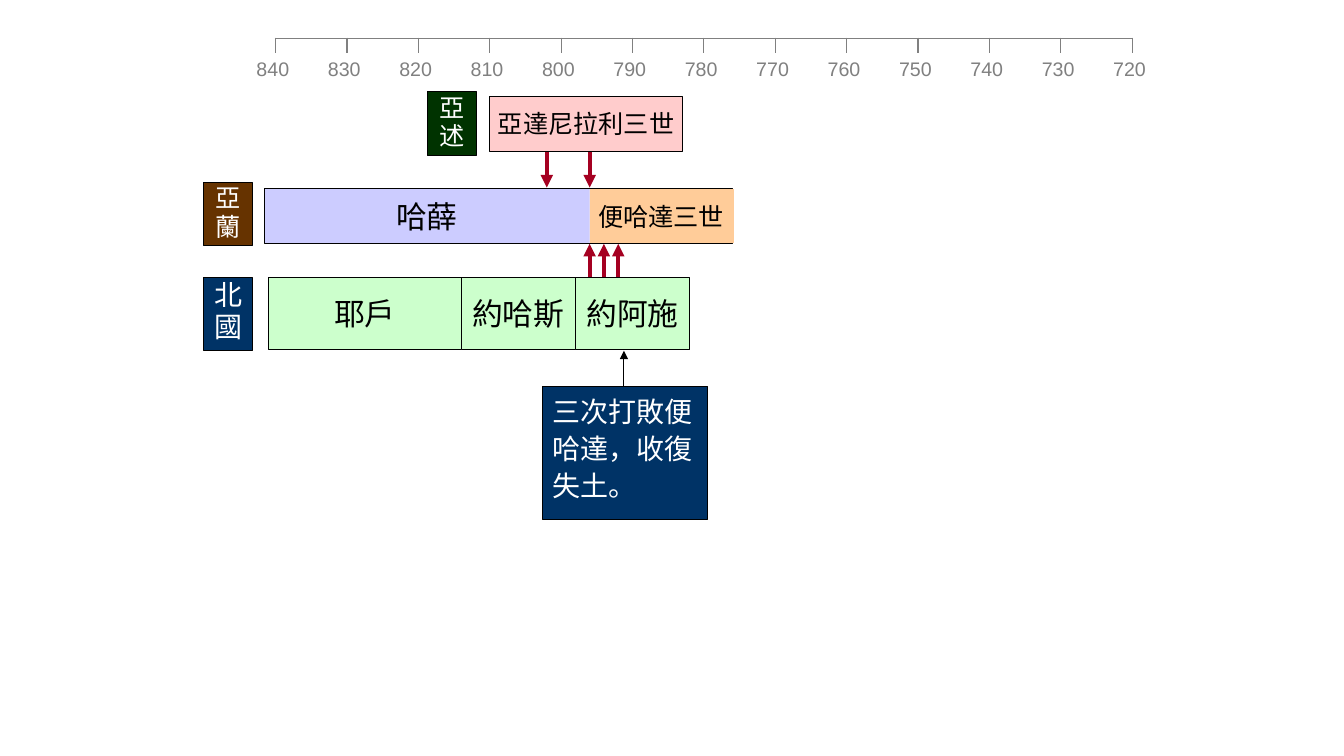
from dataclasses import dataclass

from pptx import Presentation
from pptx.dml.color import RGBColor
from pptx.enum.shapes import MSO_CONNECTOR as Connector, MSO_SHAPE as Shape
from pptx.enum.text import MSO_ANCHOR as Anchor, PP_ALIGN as Align
from pptx.oxml.ns import qn
from pptx.util import Pt
from lxml.etree import SubElement


@dataclass(frozen=True)
class Theme:
    black: str = "000000"
    white: str = "FFFFFF"
    grey: str = "808080"
    attack: str = "A50021"
    navy: str = "003366"
    brown: str = "663300"
    forest: str = "003300"
    pink: str = "FFCCCC"
    lilac: str = "CCCCFF"
    orange: str = "FFCC99"
    mint: str = "CCFFCC"
    latin: str = "Arial"
    cjk: str = "Noto Sans CJK SC"
    scale: int = 14
    small: int = 18
    medium: int = 20
    large: int = 22
    thin: float = 0.75


class Timeline:
    origin, first_year, per_year = 196.8, 840, 5.1

    def __init__(self, slide, theme):
        self.slide, self.theme = slide, theme

    def x(self, year):
        return self.origin + (self.first_year - year) * self.per_year

    def add_lines(self, frame, lines, size, color, font=None, **layout):
        font = font or self.theme.latin
        for index, line in enumerate(lines):
            paragraph = frame.paragraphs[0] if index == 0 else frame.add_paragraph()
            for key, value in layout.items():
                setattr(paragraph, key, value)
            run = paragraph.add_run()
            run.text = line
            for key, value in {"size": Pt(size), "name": font}.items():
                setattr(run.font, key, value)
            run.font.color.rgb = RGBColor.from_string(color)
            SubElement(run.font._element, qn("a:ea"), typeface=font)

    def box(self, left, top, width, height, fill=None, outline=True):
        box = self.slide.shapes.add_shape(
            Shape.RECTANGLE, Pt(left), Pt(top), Pt(width), Pt(height))
        box.shadow.inherit = False
        if fill:
            box.fill.solid()
            box.fill.fore_color.rgb = RGBColor.from_string(fill)
        else:
            box.fill.background()
        if outline:
            box.line.color.rgb = RGBColor.from_string(self.theme.black)
            box.line.width = Pt(self.theme.thin)
        else:
            box.line.fill.background()
        return box

    def reign(self, king, start, end, top, height, fill, size, font, outline=True):
        left = self.x(start)
        frame = self.box(left, top, self.x(end) - left, height, fill, outline).text_frame
        for key, value in {"word_wrap": False, "vertical_anchor": Anchor.MIDDLE}.items():
            setattr(frame, key, value)
        self.add_lines(frame, [king], size, self.theme.black, font, alignment=Align.CENTER)

    def kingdom(self, name, left, top, height, fill, size):
        frame = self.box(left, top, 34.8, height, fill).text_frame
        for key, value in {"word_wrap": False, "vertical_anchor": Anchor.TOP}.items():
            setattr(frame, key, value)
        self.add_lines(frame, name, size, self.theme.white, alignment=Align.CENTER,
                       line_spacing=0.85, space_after=Pt(size / 10))

    def callout(self, text, left, top, width, height):
        frame = self.box(left, top, width, height, self.theme.navy).text_frame
        for key, value in {"word_wrap": True, "vertical_anchor": Anchor.TOP}.items():
            setattr(frame, key, value)
        self.add_lines(frame, [text], self.theme.medium, self.theme.white,
                       alignment=Align.LEFT, line_spacing=1.1)

    def line(self, year, start, end, color, weight, arrow=True):
        x = Pt(self.x(year))
        line = self.slide.shapes.add_connector(
            Connector.STRAIGHT, x, Pt(start), x, Pt(end))
        line.line.color.rgb = RGBColor.from_string(color)
        line.line.width = Pt(weight)
        if arrow:
            SubElement(line.line._get_or_add_ln(), qn("a:tailEnd"), type="triangle")
        SubElement(line._element.spPr, qn("a:effectLst"))

    def border(self, cell, color):
        properties = cell._tc.get_or_add_tcPr()
        for index, side in enumerate(("lnL", "lnR", "lnT", "lnB")):
            edge = SubElement(properties, qn(f"a:{side}"), w=str(Pt(1)))
            fill = SubElement(edge, qn("a:solidFill"))
            SubElement(fill, qn("a:srgbClr"), val=color)
            properties.insert(index, edge)

    def strip(self, left, top, height, count, border, fill=None):
        decade = 10 * self.per_year
        table = self.slide.shapes.add_table(
            1, count, Pt(left), Pt(top), Pt(decade * count), Pt(height)).table
        for key in ("first_row", "horz_banding"):
            setattr(table, key, False)
        for column in table.columns:
            column.width = Pt(decade)
        cells = list(table.iter_cells())
        for cell in cells:
            if fill:
                cell.fill.solid()
                cell.fill.fore_color.rgb = RGBColor.from_string(fill)
            else:
                cell.fill.background()
            self.border(cell, border)
        return cells

    def scale(self, years):
        theme = self.theme
        for cell in self.strip(self.origin, 27.2, 26.5, len(years) - 1, theme.grey):
            cell.text_frame.paragraphs[0].font.size = Pt(theme.scale)
        labels = self.strip(self.origin - 34, 38, 24, len(years), theme.white, theme.white)
        for cell, year in zip(labels, years):
            self.add_lines(cell.text_frame, [str(year)], theme.scale, theme.grey,
                           alignment=Align.RIGHT)


def main():
    deck = Presentation()
    deck.slide_width, deck.slide_height = Pt(960), Pt(540)
    theme = Theme()
    timeline = Timeline(deck.slides.add_slide(deck.slide_layouts[6]), theme)

    for year in (796, 794, 792):
        timeline.line(year, 198, 174.2, theme.attack, 3)
    timeline.scale(range(840, 719, -10))

    timeline.kingdom("北國", 145.6, 198.5, 52, theme.navy, theme.medium)
    timeline.kingdom("亞蘭", 145.4, 130.3, 45.4, theme.brown, theme.small)
    for king, start, end, font in (("耶戶", 841, 814, theme.cjk),
                                   ("約哈斯", 814, 798, theme.cjk),
                                   ("約阿施", 798, 782, theme.latin)):
        timeline.reign(king, start, end, 198, 52, theme.mint, theme.large, font)

    for year in (796, 802):
        timeline.line(year, 105, 134, theme.attack, 3)

    aram_start, aram_change, aram_end = 841.6, 796, 776
    aram_top, aram_height = 134.8, 39
    timeline.reign("便哈達三世", aram_change, aram_end, aram_top, aram_height,
                   theme.orange, theme.small, theme.cjk, outline=False)
    timeline.reign("哈薛", aram_start, aram_change, aram_top, aram_height,
                   theme.lilac, theme.large, theme.cjk, outline=False)
    aram_left = timeline.x(aram_start)
    timeline.box(aram_left, aram_top, timeline.x(aram_end) - aram_left, aram_height)
    timeline.line(aram_end, aram_top + 0.5, aram_top + aram_height - 0.5,
                  theme.orange, 1.5, arrow=False)

    timeline.reign("亞達尼拉利三世", 810, 783, 69, 39, theme.pink, theme.small, theme.latin)
    timeline.kingdom("亞述", 305.3, 65.7, 45.4, theme.forest, theme.small)

    timeline.line(791.2, 359.3, 250.5, theme.black, theme.thin)
    timeline.callout("三次打敗便哈達，收復失土。", 387.4, 275.8, 118, 95)
    deck.save("out.pptx")


if __name__ == "__main__":
    main()
